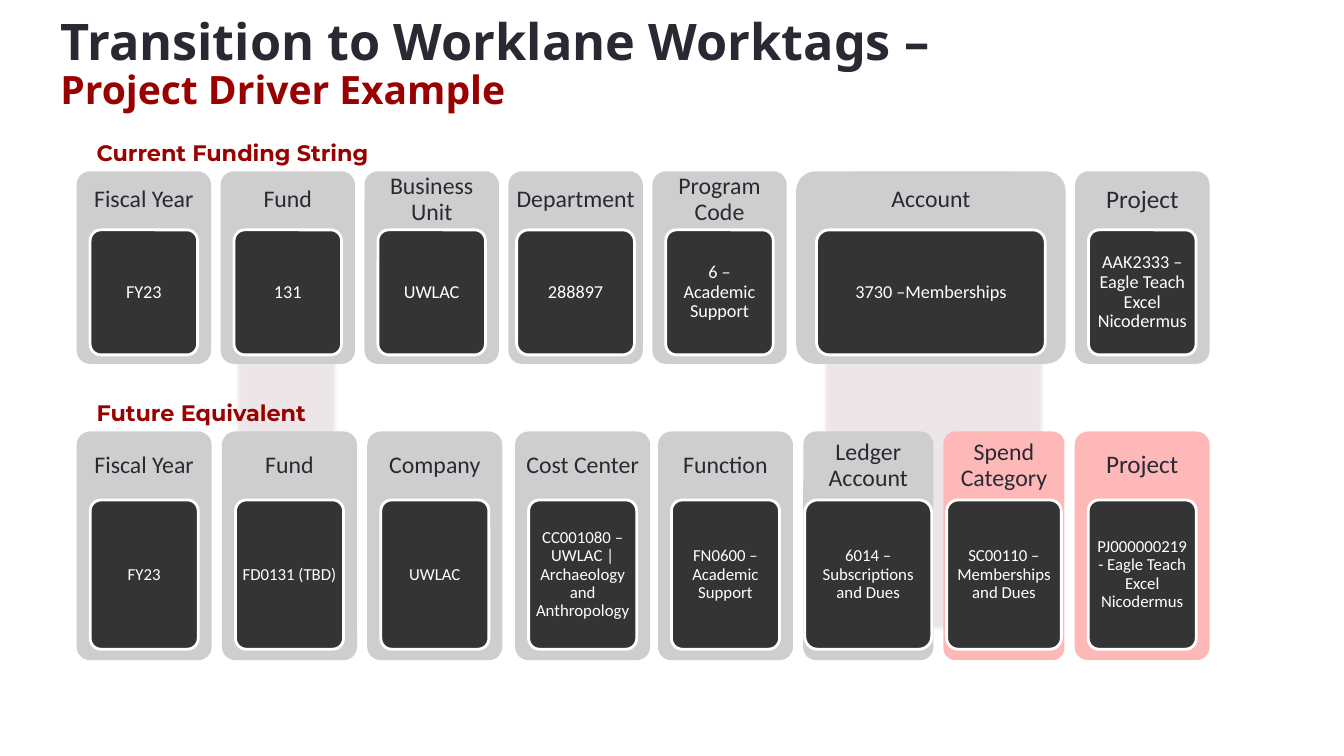
"""Builds a slide that maps the current funding string to its future worktags."""
from dataclasses import dataclass
from typing import Any, NamedTuple

from lxml import etree
from pptx import Presentation
from pptx import util as u
from pptx.dml.color import RGBColor
from pptx.enum import shapes, text
from pptx.oxml.ns import qn


@dataclass(frozen=True)
class Theme:
    ink: str = "292934"
    red: str = "990000"
    grey: str = "CECECE"
    pink: str = "FFB8B8"
    dark: str = "343434"
    white: str = "FFFFFF"
    band: str = "F4DCE2"
    shadow: str = "000000"
    title_font: str = "Noto Sans"
    label_font: str = "Montserrat"
    body_font: str = "Calibri"
    title_size: float = 36
    subtitle_size: float = 27.9
    label_size: float = 16
    head_size: float = 17


T = Theme()


class Box(NamedTuple):
    left: float
    top: float
    width: float
    height: float


@dataclass(frozen=True)
class Card:
    head: str
    value: str
    width: float = 0
    tile_width: float = 0
    fill: str = T.grey
    head_size: float = T.head_size
    nudge: float = 0


@dataclass(frozen=True)
class Row:
    label: str
    label_top: float
    top: float
    height: float
    head_height: float
    tile_top: float
    tile_height: float
    width: float
    gap: float
    value_size: float
    margin: float
    cards: tuple[Card, ...]


LEFT = 54.75
BANDS = (Box(170, 126, 68.4, 324.7), Box(589.7, 122.4, 154, 324.7))
ROWS = (
    Row("Current Funding String", 97.9, 122.4, 137.5, 41, 164.2, 89.3, 96, 6.8, 13, 3, (
        Card("Fiscal Year", "FY23"),
        Card("Fund", "131"),
        Card("Business Unit", "UWLAC"),
        Card("Department", "288897", tile_width=84.2),
        Card("Program Code", "6 – Academic Support"),
        Card("Account", "3730 –Memberships", 192.4, 163.4),
        Card("Project", "AAK2333 – Eagle Teach Excel Nicodermus", head_size=18),
    )),
    Row("Future Equivalent", 283.7, 308.2, 163.4, 49, 357.1, 106.6, 96.5, 7.3, 12, 2, (
        Card("Fiscal Year", "FY23"),
        Card("Fund", "FD0131 (TBD)"),
        Card("Company", "UWLAC"),
        Card("Cost Center", "CC001080 – UWLAC | Archaeology and Anthropology", nudge=1.8),
        Card("Function", "FN0600 – Academic Support"),
        Card("Ledger Account", "6014 – Subscriptions and Dues", 92.9, 90.7),
        Card("Spend Category", "SC00110 – Memberships and Dues", 86.4, 82, T.pink),
        Card("Project", "PJ000000219 - Eagle Teach Excel Nicodermus", fill=T.pink, head_size=18),
    )),
)


def points(box: Box) -> list[u.Length]:
    """Turns a box into lengths in points."""
    return [u.Pt(v) for v in box]


def set_all(target: Any, values: dict[str, Any]) -> None:
    """Sets each named attribute on the target."""
    for name, value in values.items():
        setattr(target, name, value)


def style_run(r: Any, font: str, size: float, color: str, bold: bool = False) -> None:
    """Formats one run."""
    set_all(r.font, {"name": font, "size": u.Pt(size), "bold": bold})
    r.font.color.rgb = RGBColor.from_string(color)


def write(sp: Any, content: str, font: str, size: float, color: str, bold: bool = False,
          centred: bool = True, margin: float = 5) -> None:
    """Writes one paragraph into a shape."""
    tf = sp.text_frame
    set_all(tf, {"word_wrap": True, "auto_size": text.MSO_AUTO_SIZE.NONE})
    if centred:
        tf.vertical_anchor = text.MSO_ANCHOR.MIDDLE
        set_all(tf, {f"margin_{side}": u.Pt(margin)
                     for side in ("left", "top", "right", "bottom")})
    p = tf.paragraphs[0]
    set_all(p, {"line_spacing": 0.9,
                "alignment": text.PP_ALIGN.CENTER if centred else text.PP_ALIGN.LEFT})
    r = p.add_run()
    r.text = content
    style_run(r, font, size, color, bold)


def add_round(parent: Any, box: Box, fill: str, line: str = "") -> Any:
    """Adds a rounded rectangle without shadow."""
    sp = parent.add_shape(shapes.MSO_SHAPE.ROUNDED_RECTANGLE, *points(box))
    sp.shadow.inherit = False
    sp.adjustments[0] = 0.1
    sp.fill.solid()
    sp.fill.fore_color.rgb = RGBColor.from_string(fill)
    if line:
        sp.line.color.rgb = RGBColor.from_string(line)
        sp.line.width = u.Pt(2)
    else:
        sp.line.fill.background()
    return sp


def add_band(s: Any, box: Box) -> None:
    """Adds a translucent band with a soft shadow between the rows."""
    sp = s.shapes.add_shape(shapes.MSO_SHAPE.FLOWCHART_ALTERNATE_PROCESS, *points(box))
    sp.shadow.inherit = False
    sp.line.fill.background()
    sp.fill.solid()
    sp.fill.fore_color.rgb = RGBColor.from_string(T.band)
    color = sp.fill._xPr.find(f".//{qn('a:srgbClr')}")
    etree.SubElement(color, qn("a:alpha"), val="24000")
    effects = sp.fill._xPr.find(qn("a:effectLst"))
    shadow = etree.SubElement(effects, qn("a:outerShdw"), blurRad=str(u.Pt(3.1)),
                              dist=str(u.Pt(1.8)), dir="5400000", rotWithShape="0")
    color = etree.SubElement(shadow, qn("a:srgbClr"), val=T.shadow)
    etree.SubElement(color, qn("a:alpha"), val="35000")


def add_title(s: Any) -> None:
    """Fills the title placeholder with its two lines."""
    sp = s.shapes.title
    left, top, width, height = points(Box(36, 16.6, 858.2, 59.8))
    set_all(sp, {"left": left, "top": top, "width": width, "height": height})
    write(sp, "Transition to Worklane Worktags – ", T.title_font, T.title_size, T.ink, True, False)
    sp.text_frame.vertical_anchor = text.MSO_ANCHOR.MIDDLE
    p = sp.text_frame.paragraphs[0]
    p.add_line_break()
    r = p.add_run()
    r.text = "Project Driver Example"
    style_run(r, T.title_font, T.subtitle_size, T.red, True)


def add_row(s: Any, row: Row) -> None:
    """Draws one labelled row of cards."""
    group = s.shapes.add_group_shape().shapes
    left = LEFT
    for card in row.cards:
        width = card.width or row.width
        tile_width = card.tile_width or width * 0.8
        x = left + card.nudge
        add_round(group, Box(x, row.top, width, row.height), card.fill)
        head = group.add_textbox(*points(Box(x, row.top, width, row.head_height)))
        write(head, card.head, T.body_font, card.head_size, T.ink)
        tile = add_round(group, Box(x + (width - tile_width) / 2, row.tile_top,
                                    tile_width, row.tile_height), T.dark, T.white)
        write(tile, card.value, T.body_font, row.value_size, T.white, margin=row.margin)
        left += width + row.gap
    label = s.shapes.add_textbox(*points(Box(61.9, row.label_top, 375, 27.4)))
    write(label, row.label, T.label_font, T.label_size, T.red, True, False)


def main() -> None:
    """Builds and saves the presentation."""
    prs = Presentation()
    set_all(prs, {"slide_width": u.Pt(960), "slide_height": u.Pt(540)})
    s = prs.slides.add_slide(prs.slide_layouts[5])
    add_title(s)
    for band in BANDS:
        add_band(s, band)
    for row in ROWS:
        add_row(s, row)
    prs.save("out.pptx")


if __name__ == "__main__":
    main()
